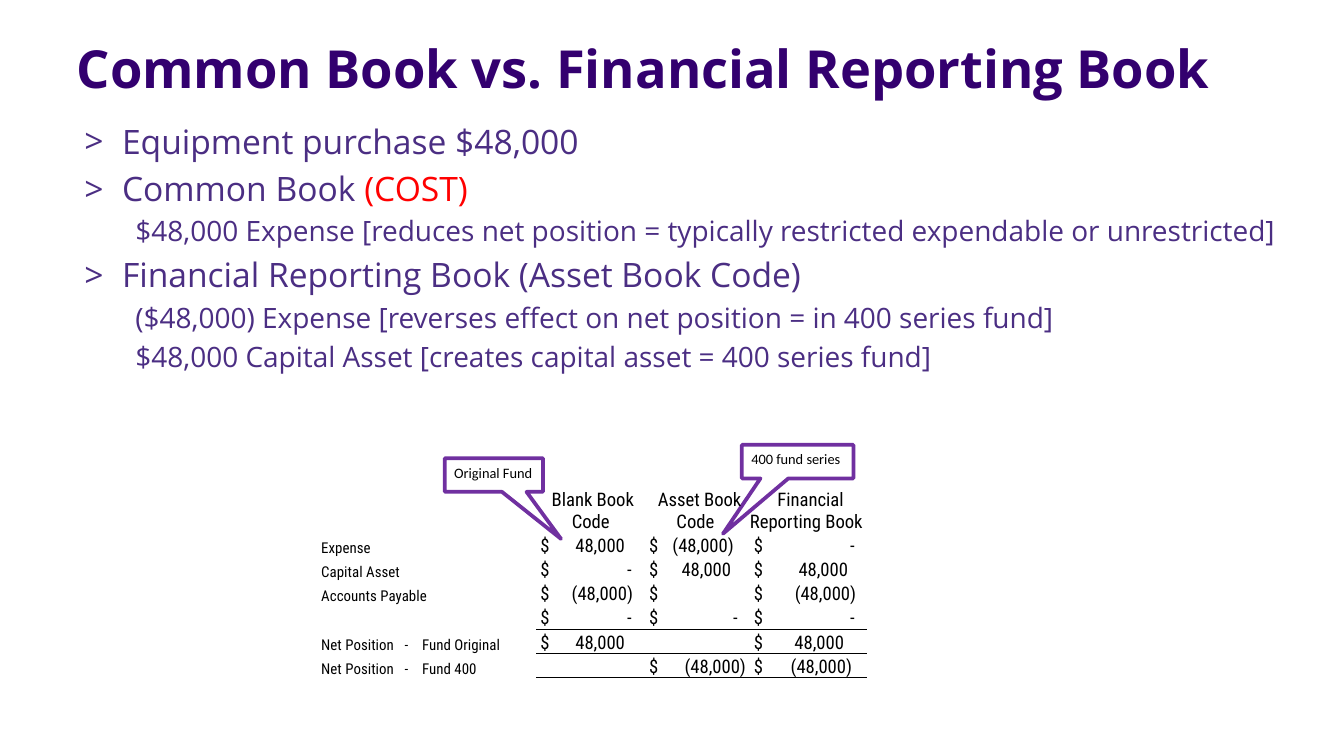
import pptx
import pptx.util
from pptx.dml.color import RGBColor
from pptx.enum.shapes import MSO_SHAPE
from pptx.enum.text import MSO_ANCHOR, PP_ALIGN
from pptx.oxml import parse_xml
from pptx.oxml.ns import nsdecls
from pptx.util import Inches, Pt

INDIGO = RGBColor(0x33, 0x00, 0x6F)
PURPLE = RGBColor(0x4B, 0x2E, 0x83)
VIOLET = RGBColor(0x70, 0x30, 0xA0)
RED = RGBColor(0xFF, 0x00, 0x00)
BLACK = RGBColor(0, 0, 0)

TITLE = "Common Book vs. Financial Reporting Book"
# level, text, red ending
BODY = [
    (0, "Equipment purchase $48,000", ""),
    (0, "Common Book ", "(COST)"),
    (1, "$48,000 Expense [reduces net position = typically restricted expendable or unrestricted]", ""),
    (0, "Financial Reporting Book (Asset Book Code)", ""),
    (1, "($48,000) Expense [reverses effect on net position = in 400 series fund]", ""),
    (1, "$48,000 Capital Asset [creates capital asset = 400 series fund]", ""),
]
BODY_SIZES = (18, 15)
# text, left, top, width, tail x, tail y
CALLOUTS = [
    ("Original Fund", 3.31, 3.41, 0.73, 0.685, 1.899),
    ("400 fund series", 5.52, 3.31, 0.83, -0.669, 2.147),
]
HEADERS = ["", " Blank Book Code", " Asset Book Code ", " Financial Reporting Book "]
# label, then (amount, right edge within its column) or None
ROWS = [
    ("Expense", ("48,000", 0.66), ("(48,000)", 0.66), ("-", 0.78)),
    ("Capital Asset", ("-", 0.71), ("48,000", 0.64), ("48,000", 0.73)),
    ("Accounts Payable", ("(48,000)", 0.72), ("", 0.66), ("(48,000)", 0.79)),
    ("", ("-", 0.71), ("-", 0.69), ("-", 0.78)),
    ("Net Position\t-\tFund Original", ("48,000", 0.66), None, ("48,000", 0.70)),
    ("Net Position\t-\tFund 400", None, ("(48,000)", 0.75), ("(48,000)", 0.76)),
]
COL_WIDTHS = [1.60, 0.81, 0.78, 0.87]
HEADER_HEIGHT, ROW_HEIGHT = 0.33, 0.18
FIRST_RULED = 4  # ruled below this row and every later one
LABEL_TABS = [(0.62, "l"), (0.75, "l")]
DOLLAR_INSET = 0.03
PLAIN_TABLE_STYLE = "{2D5ABB26-0587-4C30-8999-92F81FD0307C}"


def set_font(font, name, size, color):
    font.name, font.size, font.color.rgb = name, Pt(size), color


def set_insets(tf, left, top, right, bottom):
    tf.margin_left, tf.margin_top = Inches(left), Inches(top)
    tf.margin_right, tf.margin_bottom = Inches(right), Inches(bottom)


def add_tabs(p, tabs):
    stops = "".join(f'<a:tab pos="{Inches(x)}" algn="{side}"/>' for x, side in tabs)
    p._p.get_or_add_pPr().append(parse_xml(f'<a:tabLst {nsdecls("a")}>{stops}</a:tabLst>'))


def add_rules(cell, edges):
    """Draw thin black borders on the given edges, in schema order (T, B)."""
    for i, edge in enumerate(edges):
        cell._tc.get_or_add_tcPr().insert(i, parse_xml(
            f'<a:ln{edge} {nsdecls("a")} w="{Pt(0.5)}"><a:solidFill>'
            f'<a:srgbClr val="{BLACK}"/></a:solidFill></a:ln{edge}>'))


def add_title(s):
    sp = s.shapes.title
    sp.left, sp.top, sp.width, sp.height = map(Inches, (0.5, 0.28, 9.81, 0.37))
    tf = sp.text_frame
    tf.text = TITLE
    tf.word_wrap = True
    tf.vertical_anchor = MSO_ANCHOR.TOP
    set_insets(tf, 0.07, 0.04, 0.07, 0.04)
    p = tf.paragraphs[0]
    p.alignment = PP_ALIGN.LEFT
    p.line_spacing = 0.9
    set_font(p.runs[0].font, "Open Sans", 28.1, INDIGO)
    p.runs[0].font.bold = True


def add_body(s):
    tf = s.shapes.add_textbox(*map(Inches, (0.53, 0.85, 9.14, 4.39))).text_frame
    tf.word_wrap = True
    for i, (level, text, ending) in enumerate(BODY):
        size = BODY_SIZES[level]
        p = tf.add_paragraph() if i else tf.paragraphs[0]
        p.text = text
        p.level = level
        if i:
            p.space_before = Pt(0.2 * size)
        pPr = p._p.get_or_add_pPr()
        pPr.set("marL", str(Inches(0.38 if level else 0.28)))
        pPr.set("indent", str(0 if level else Inches(-0.28)))
        if not level:
            pPr.append(parse_xml(f'<a:buFont {nsdecls("a")} typeface="Open Sans"/>'))
            pPr.append(parse_xml(f'<a:buChar {nsdecls("a")} char="&gt;"/>'))
        if ending:
            p.add_run().text = ending
        for r in p.runs:
            set_font(r.font, "Open Sans", size, PURPLE)
        if ending:
            p.runs[-1].font.color.rgb = RED


def add_callout(s, text, left, top, width, tail_x, tail_y):
    sp = s.shapes.add_shape(MSO_SHAPE.RECTANGULAR_CALLOUT, Inches(left), Inches(top),
                            Inches(width), Inches(0.25))
    sp.adjustments[0], sp.adjustments[1] = tail_x, tail_y
    sp.shadow.inherit = False
    sp.fill.background()
    sp.line.color.rgb = VIOLET
    sp.line.width = Pt(2)
    tf = sp.text_frame
    tf.text = text
    tf.word_wrap = True
    tf.vertical_anchor = MSO_ANCHOR.TOP
    set_insets(tf, 0.07, 0.04, 0.02, 0.04)
    tf.paragraphs[0].alignment = PP_ALIGN.LEFT
    set_font(tf.paragraphs[0].runs[0].font, "Calibri", 7.7, BLACK)


def add_ledger(s):
    height = HEADER_HEIGHT + ROW_HEIGHT * len(ROWS)
    table = s.shapes.add_table(len(ROWS) + 1, len(COL_WIDTHS), Inches(2.39), Inches(3.63),
                               Inches(sum(COL_WIDTHS)), Inches(height)).table
    table.first_row = table.horz_banding = False
    table._tbl.tblPr[0].text = PLAIN_TABLE_STYLE
    for column, width in zip(table.columns, COL_WIDTHS):
        column.width = Inches(width)
    for i, values in enumerate([HEADERS] + ROWS):
        table.rows[i].height = Inches(ROW_HEIGHT if i else HEADER_HEIGHT)
        for j, value in enumerate(values):
            cell = table.cell(i, j)
            cell.fill.background()
            cell.vertical_anchor = MSO_ANCHOR.BOTTOM
            is_amount = i > 0 and j > 0
            set_insets(cell, DOLLAR_INSET if is_amount else 0, 0, 0, 0)
            p = cell.text_frame.paragraphs[0]
            if is_amount and value:
                amount, right = value
                p.text = f"$\t{amount}" if amount else "$"
                add_tabs(p, [(right - DOLLAR_INSET, "r")])
            elif value:
                p.text = value
                if "\t" in value:
                    add_tabs(p, LABEL_TABS)
            if i == 0:
                p.alignment = PP_ALIGN.CENTER
            size = 10 if j else 8
            for r in p.runs:
                set_font(r.font, "Roboto Condensed", size, BLACK)
            if not p.runs:
                p._p.append(parse_xml(f'<a:endParaRPr {nsdecls("a")} sz="{size * 100}"/>'))
            if j and i >= FIRST_RULED:
                add_rules(cell, "TB" if i > FIRST_RULED else "B")


prs = pptx.Presentation()
prs.slide_width = Inches(10)
prs.slide_height = prs.slide_width * 9 // 16
s = prs.slides.add_slide(prs.slide_layouts[5])
add_title(s)
add_body(s)
for callout in CALLOUTS:
    add_callout(s, *callout)
add_ledger(s)
prs.save("out.pptx")
